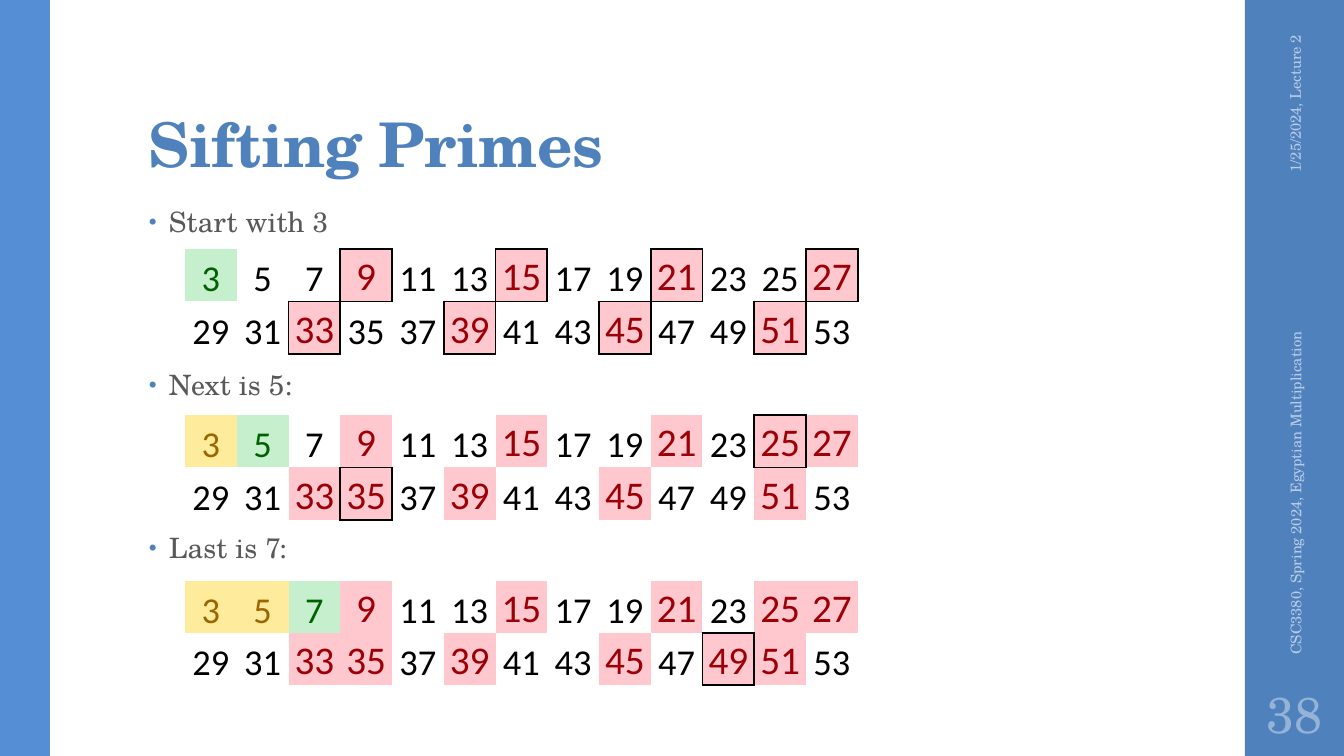
import lxml.etree
import pptx
import pptx.dml.color
import pptx.enum.shapes
import pptx.enum.text
import pptx.oxml.ns
import pptx.util

SCALE = 914400 / 100.8
SERIF = "TeX Gyre Schola"
SANS = "Calibri"
COLS = 13
ODDS = range(3, 54, 2)
PRIMES = [3, 5, 7]
COLORS = {
    "blue": "4F81BD", "edge": "558ED5", "body": "595959", "pale": "B9CDE5",
    "page": "95B3D7", "black": "000000", "green": "006100", "mint": "C6EFCE",
    "brown": "9C6500", "cream": "FFEB9C", "red": "9C0006", "pink": "FFC7CE",
}
ALIGN = pptx.enum.text.PP_ALIGN
ANCHOR = pptx.enum.text.MSO_ANCHOR


def px(count):
    return pptx.util.Emu(round(count * SCALE))


def hue(name):
    return pptx.dml.color.RGBColor.from_string(COLORS[name])


def add_node(parent, tag, **attrs):
    return lxml.etree.SubElement(parent, pptx.oxml.ns.qn(tag), attrs)


def style(para, size, color, face=SERIF, bold=False, track=0):
    for run in para.runs:
        run.font.size = pptx.util.Pt(size)
        run.font.name = face
        run.font.bold = bold
        run.font.color.rgb = hue(color)
        if track:
            run.font._element.set("spc", str(track))


def add_bar(slide, left, width, color):
    bar = slide.shapes.add_shape(
        pptx.enum.shapes.MSO_SHAPE.RECTANGLE, px(left), 0, px(width), px(756))
    bar.shadow.inherit = False
    bar.fill.solid()
    bar.fill.fore_color.rgb = hue(color)
    bar.line.fill.background()


def add_text(slide, box, text, size, color, anchor=ANCHOR.MIDDLE,
             align=ALIGN.LEFT, turn=0, bold=False, track=0):
    shape = slide.shapes.add_textbox(*map(px, box))
    shape.rotation = turn
    frame = shape.text_frame
    frame.word_wrap = True
    frame.vertical_anchor = anchor
    frame.text = text
    for para in frame.paragraphs:
        para.alignment = align
        style(para, size, color, bold=bold, track=track)
    return frame


def add_title(slide):
    frame = add_text(slide, (139, 32, 1068, 154), "Sifting Primes", 44, "blue",
                     ANCHOR.BOTTOM, bold=True, track=-50)
    frame.margin_top = px(3)
    frame.paragraphs[0].line_spacing = 0.9


def add_steps(slide):
    steps = ["Start with 3", "Next is 5:", "Last is 7:"]
    frame = add_text(slide, (139, 202, 948, 480), "\n".join(steps), 20, "body",
                     ANCHOR.TOP, track=10)
    for row, para in enumerate(frame.paragraphs):
        para.line_spacing = 0.95
        para.space_before = pptx.util.Pt(91.6 if row else 0)
        para.space_after = pptx.util.Pt(2)
        props = para._p.get_or_add_pPr()
        props.set("marL", str(px(20)))
        props.set("indent", str(-px(20)))
        tint = add_node(props, "a:buClr")
        add_node(tint, "a:srgbClr", val=COLORS["blue"])
        add_node(props, "a:buSzPct", val="80000")
        add_node(props, "a:buFont", typeface="Arial")
        add_node(props, "a:buChar", char="•")


def is_new(num, prime):
    older = [p for p in PRIMES if p < prime]
    return num > prime and num % prime == 0 and all(num % p for p in older)


def pick(num, prime):
    if num == prime:
        return "green", "mint", 26
    if num in PRIMES and num < prime:
        return "brown", "cream", 26
    if any(is_new(num, p) for p in PRIMES if p <= prime):
        return "red", "pink", 28
    return "black", None, 26


def set_lines(cell, sides):
    props = cell._tc.get_or_add_tcPr()
    for spot, (side, drawn) in enumerate(sides.items()):
        line = add_node(props, "a:ln" + side, w=str(pptx.util.Pt(1.5)))
        if drawn:
            fill = add_node(line, "a:solidFill")
            add_node(fill, "a:srgbClr", val=COLORS["black"])
        else:
            add_node(line, "a:noFill")
        props.insert(spot, line)


def fill_cell(cell, num, prime):
    color, back, size = pick(num, prime)
    cell.text_frame.text = str(num)
    cell.vertical_anchor = ANCHOR.BOTTOM
    cell.margin_left = cell.margin_right = cell.margin_top = px(1)
    cell.margin_bottom = 0
    para = cell.text_frame.paragraphs[0]
    para.alignment = ALIGN.CENTER
    style(para, size, color, SANS)
    if back:
        cell.fill.solid()
        cell.fill.fore_color.rgb = hue(back)
    else:
        cell.fill.background()


def add_sieve(slide, top, high, prime):
    grid = slide.shapes.add_table(2, COLS, px(185), px(top), px(673), px(high)).table
    grid.first_row = grid.horz_banding = False
    for col in grid.columns:
        col.width = px(673) // COLS
    for row in grid.rows:
        row.height = px(high) // 2
    boxed = {divmod(i, COLS) for i, num in enumerate(ODDS) if is_new(num, prime)}
    for i, num in enumerate(ODDS):
        row, col = divmod(i, COLS)
        cell = grid.cell(row, col)
        fill_cell(cell, num, prime)
        near = {"L": (row, col - 1), "R": (row, col + 1),
                "T": (row - 1, col), "B": (row + 1, col)}
        set_lines(cell, {side: (row, col) in boxed or spot in boxed
                         for side, spot in near.items()})


def main():
    deck = pptx.Presentation()
    deck.slide_width, deck.slide_height = px(1344), px(756)
    slide = deck.slides.add_slide(deck.slide_layouts[6])
    add_bar(slide, 1245, 99, "blue")
    add_bar(slide, 0, 50, "edge")
    add_title(slide)
    add_steps(slide)
    add_text(slide, (1190, 110, 210, 40), "1/25/2024, Lecture 2", 10.5, "pale",
             align=ALIGN.RIGHT, turn=270)
    add_text(slide, (1098, 447, 395, 40),
             "CSC3380, Spring 2024, Egyptian Multiplication", 10.5, "pale", turn=270)
    page = add_text(slide, (1245, 680, 100, 66), "38", 36, "page", align=ALIGN.CENTER)
    page.margin_left = page.margin_right = px(5)
    for step, (prime, high) in enumerate(zip(PRIMES, [105, 105, 104])):
        add_sieve(slide, 249 + 166 * step, high, prime)
    deck.save("out.pptx")


if __name__ == "__main__":
    main()
